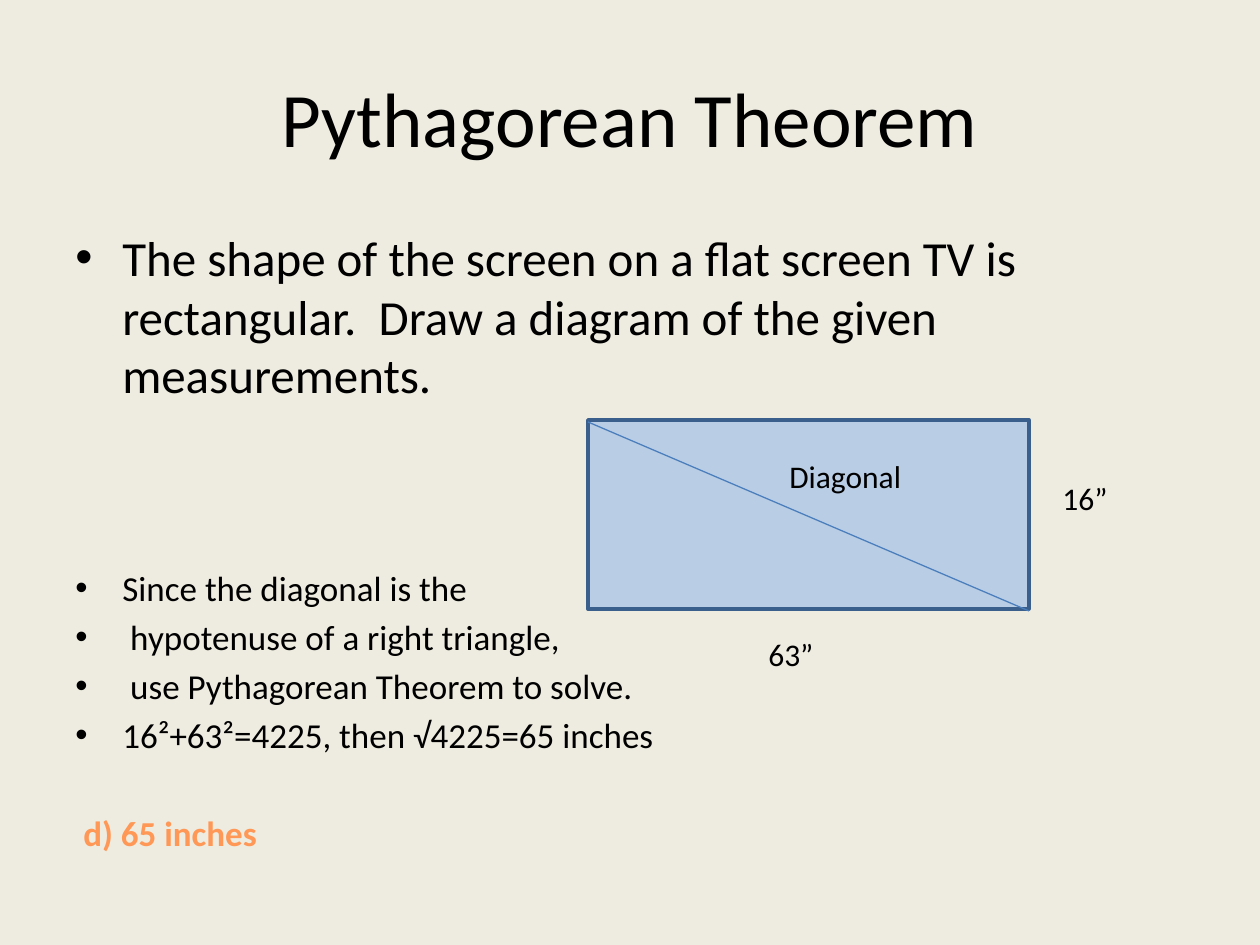
import dataclasses

import pptx
import pptx.dml.color
import pptx.enum.shapes
import pptx.enum.text
import pptx.oxml.ns
import pptx.util
from lxml import etree

PX = 914400 / 126  # EMU in one px


@dataclasses.dataclass(frozen=True)
class Theme:
    font: str = "Calibri"
    background: str = "EEECE1"
    text: str = "000000"
    answer: str = "FF9856"
    screen_fill: str = "B9CDE5"
    screen_line: str = "3A5F8C"
    diagonal: str = "4B7EBC"
    title_size: int = 44
    question_size: int = 28
    step_size: int = 20
    label_size: int = 18


THEME = Theme()
INDENT = 47


def emu(px):
    return pptx.util.Emu(round(px * PX))


def rgb(value):
    return pptx.dml.color.RGBColor.from_string(value)


def add_run(p, text, size, color=THEME.text, bold=False):
    r = p.add_run()
    r.text = text
    r.font.name = THEME.font
    r.font.size = pptx.util.Pt(size)
    r.font.bold = bold
    r.font.color.rgb = rgb(color)


def add_bullet(p):
    p_pr = p._p.get_or_add_pPr()
    p_pr.set("marL", str(emu(INDENT)))
    p_pr.set("indent", str(-emu(INDENT)))
    font = etree.SubElement(p_pr, pptx.oxml.ns.qn("a:buFont"))
    font.set("typeface", "Arial")
    bullet = etree.SubElement(p_pr, pptx.oxml.ns.qn("a:buChar"))
    bullet.set("char", "•")


def add_text_frame(slide, box):
    tf = slide.shapes.add_textbox(*map(emu, box)).text_frame
    tf.word_wrap = True
    return tf


def add_title(slide, text, box):
    tf = add_text_frame(slide, box)
    tf.vertical_anchor = pptx.enum.text.MSO_ANCHOR.MIDDLE
    p = tf.paragraphs[0]
    p.alignment = pptx.enum.text.PP_ALIGN.CENTER
    add_run(p, text, THEME.title_size)


def add_label(slide, text, box):
    tf = add_text_frame(slide, box)
    add_run(tf.paragraphs[0], text, THEME.label_size)


def add_body(slide, question, steps, answer, box):
    tf = add_text_frame(slide, box)
    p = tf.paragraphs[0]
    add_run(p, question, THEME.question_size)
    add_bullet(p)

    # The first step leaves room for the diagram
    for i, step in enumerate(steps):
        p = tf.add_paragraph()
        p.space_before = pptx.util.Pt(4 if i else 93)
        add_run(p, step, THEME.step_size)
        add_bullet(p)

    p = tf.add_paragraph()
    p.space_before = pptx.util.Pt(32)
    add_run(p, " ", THEME.step_size)
    add_run(p, answer, THEME.step_size, THEME.answer, bold=True)


def add_screen(slide, box):
    sp = slide.shapes.add_shape(
        pptx.enum.shapes.MSO_SHAPE.RECTANGLE, *map(emu, box))
    sp.shadow.inherit = False
    sp.fill.solid()
    sp.fill.fore_color.rgb = rgb(THEME.screen_fill)
    sp.line.color.rgb = rgb(THEME.screen_line)
    sp.line.width = pptx.util.Pt(2)


def add_diagonal(slide, start, end):
    line = slide.shapes.add_connector(
        pptx.enum.shapes.MSO_CONNECTOR.STRAIGHT, *map(emu, start + end))
    line.line.color.rgb = rgb(THEME.diagonal)
    line.line.width = pptx.util.Pt(0.75)
    etree.SubElement(line._element.spPr, pptx.oxml.ns.qn("a:effectLst"))


def main():
    prs = pptx.Presentation()
    prs.slide_width, prs.slide_height = emu(1260), emu(945)
    slide = prs.slides.add_slide(prs.slide_layouts[6])
    slide.background.fill.solid()
    slide.background.fill.fore_color.rgb = rgb(THEME.background)

    # Title and worked solution
    add_title(slide, "Pythagorean Theorem", (63, 38, 1134, 158))
    add_body(
        slide,
        "The shape of the screen on a flat screen TV is rectangular.  "
        "Draw a diagram of the given measurements.",
        ["Since the diagonal is the",
         " hypotenuse of a right triangle,",
         " use Pythagorean Theorem to solve.",
         "16²+63²=4225, then √4225=65 inches"],
        "d) 65 inches",
        (63, 221, 1134, 624))

    # Screen diagram with its measurements
    left, top, width, height = 588, 420, 441, 189
    add_screen(slide, (left, top, width, height))
    add_label(slide, "16”", (1050, 473, 95, 50))
    add_label(slide, "63”", (756, 629, 179, 53))
    add_diagonal(slide, (left, top + 2), (left + width, top + height + 2))
    add_label(slide, "Diagonal", (777, 451, 199, 50))

    prs.save("out.pptx")


if __name__ == "__main__":
    main()
